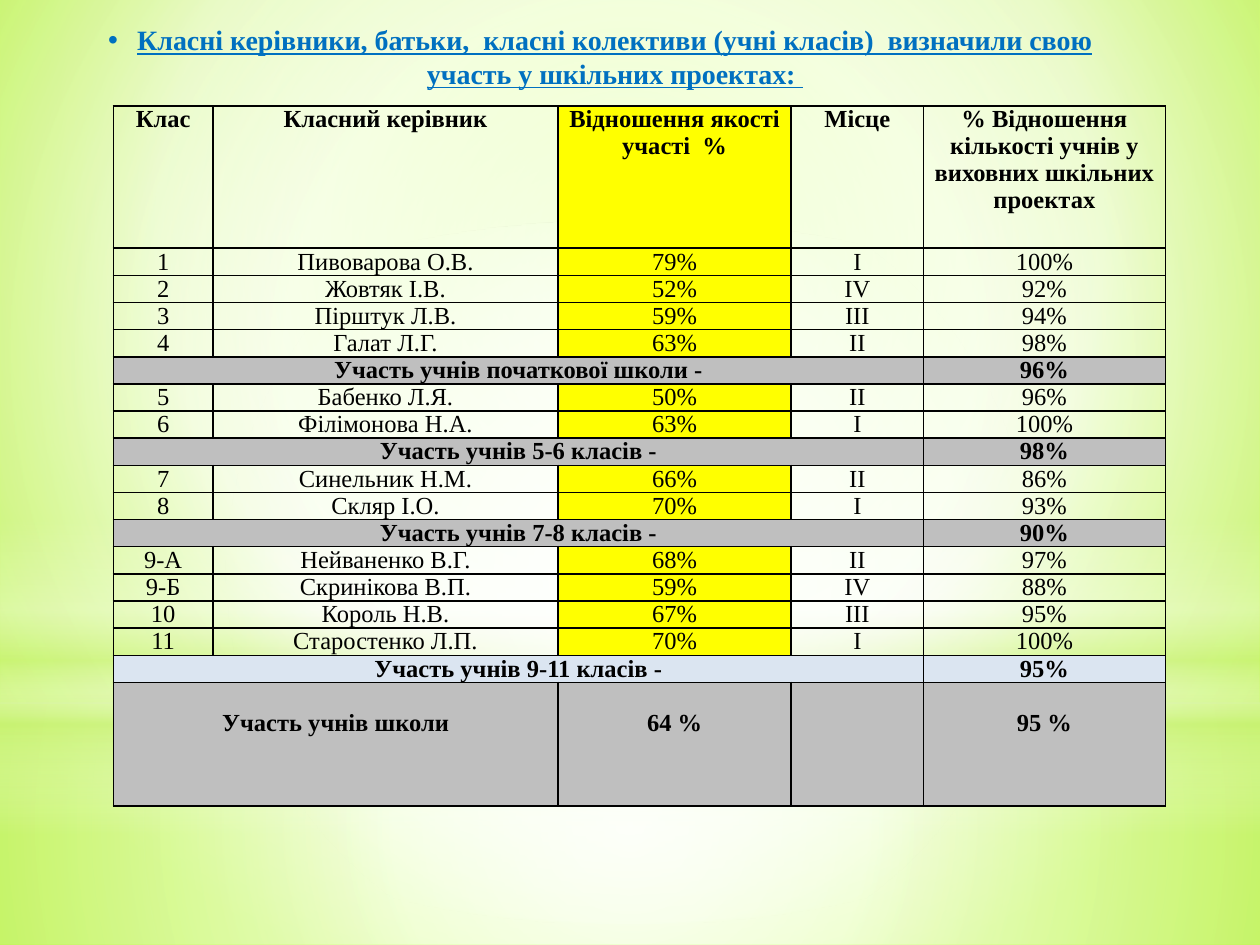
from lxml import etree
from pptx import Presentation
from pptx.dml.color import RGBColor
from pptx.enum.shapes import MSO_SHAPE
from pptx.enum.text import MSO_ANCHOR, PP_ALIGN
from pptx.oxml import parse_xml
from pptx.oxml.ns import nsdecls, qn
from pptx.util import Inches, Pt

RECT, OVAL = MSO_SHAPE.RECTANGLE, MSO_SHAPE.OVAL
TOP, CENTER = MSO_ANCHOR.TOP, PP_ALIGN.CENTER
FONT = "Times New Roman"
COLORS = {
    "black": "000000", "blue": "0070C0", "yellow": "FFFF00", "gray": "BFBFBF",
    "pale": "DBE5F1", "white": "FFFFFF", "lime": "CAF278", "edge": "B7FF29",
    "core": "CAFF60", "cream": "F7FFE7",
}
BACK = [(0, "core", 100), (60, "cream", 100), (100, "edge", 100)]
GLOWS = [
    (RECT, 5.58, 1.92, [(0, "white", 91), (37, "white", 76), (100, "lime", 79)], (50,) * 4),
    (RECT, 0, 5.58, [(0, "white", 89), (48, "white", 62), (100, "lime", 79)], (50,) * 4),
    (RECT, 4.12, 2.5, [(0, "white", 0), (29, "white", 30), (45, "lime", 40),
                       (55, "white", 26), (65, "lime", 60), (100, "white", 0)], None),
    (OVAL, 1.75, 5.58, [(0, "white", 100), (56, "white", 0)], (50,) * 4),
]
TITLE = ("Класні керівники, батьки,  класні колективи (учні класів)  "
         "визначили свою участь у шкільних проектах: ")
WIDTHS = [0.79, 2.74, 1.85, 1.05, 1.92]
HEAD_H, ROW_H, LAST_H = 1.13, 0.21, 0.98
HEAD = ["Клас", "Класний керівник", "Відношення якості участі  %", "Місце",
        "% Відношення\nкількості учнів у виховних шкільних проектах"]
GROUPS = [
    ([("1", "Пивоварова О.В.", "79%", "І", "100%"),
      ("2", "Жовтяк І.В.", "52%", "ІV", "92%"),
      ("3", "Пірштук Л.В.", "59%", "ІІІ", "94%"),
      ("4", "Галат Л.Г.", "63%", "ІІ", "98%")],
     "Участь учнів початкової школи -", "96%", "gray"),
    ([("5", "Бабенко Л.Я.", "50%", "ІІ", "96%"),
      ("6", "Філімонова Н.А.", "63%", "І", "100%")],
     "Участь учнів 5-6 класів -", "98%", "gray"),
    ([("7", "Синельник Н.М.", "66%", "ІІ", "86%"),
      ("8", "Скляр І.О.", "70%", "І", "93%")],
     "Участь учнів 7-8 класів -", "90%", "gray"),
    ([("9-А", "Нейваненко В.Г.", "68%", "ІІ", "97%"),
      ("9-Б", "Скринікова В.П.", "59%", "ІV", "88%"),
      ("10", "Король Н.В.", "67%", "ІІІ", "95%"),
      ("11", "Старостенко Л.П.", "70%", "І", "100%")],
     "Участь учнів 9-11 класів -", "95%", "pale"),
]
TOTAL = ["Участь учнів школи", "", "64 %", "", "95 %"]


def rgb(name):
    return RGBColor.from_string(COLORS[name])


def put(frame, text, size=14, color="black", bold=False, line=False, lead=None, gap=None):
    for i, part in enumerate(text.split("\n")):
        para = frame.paragraphs[0] if i == 0 else frame.add_paragraph()
        para.alignment = CENTER
        if lead:
            para.line_spacing = lead
        if gap:
            para.space_before = para.space_after = Pt(gap)
        run = para.add_run()
        run.text = part
        font = run.font
        font.name, font.size, font.bold, font.underline = FONT, Pt(size), bold, line
        font.color.rgb = rgb(color)


def shade(fill, root, stops, focus=None):
    fill.solid()
    old = next(root.iter(qn("a:solidFill")))
    marks = "".join(
        f'<a:gs pos="{pos * 1000}"><a:srgbClr val="{COLORS[name]}">'
        f'<a:alpha val="{alpha * 1000}"/></a:srgbClr></a:gs>'
        for pos, name, alpha in stops)
    if focus:
        sides = " ".join(f'{k}="{v * 1000}"' for k, v in zip("ltrb", focus))
        way = f'<a:path path="circle"><a:fillToRect {sides}/></a:path>'
    else:
        way = '<a:lin ang="5400000" scaled="0"/>'
    new = parse_xml(f'<a:gradFill {nsdecls("a")} rotWithShape="1">'
                    f'<a:gsLst>{marks}</a:gsLst>{way}</a:gradFill>')
    old.getparent().replace(old, new)


def glow(slide, kind, top, height, stops, focus):
    shape = slide.shapes.add_shape(kind, 0, Inches(top), Inches(10), Inches(height))
    shape.shadow.inherit = False
    shape.line.fill.background()
    shade(shape.fill, shape.element.spPr, stops, focus)


def head(slide):
    title = slide.shapes.title
    title.left, title.top = Inches(0.67), Inches(0.13)
    title.width, title.height = Inches(8.19), Inches(0.94)
    frame = title.text_frame
    frame.word_wrap = True
    frame.vertical_anchor = TOP
    put(frame, TITLE, size=16, color="blue", bold=True, line=True)
    props = frame.paragraphs[0]._p.get_or_add_pPr()
    props.set("marL", str(Inches(0.23)))
    props.set("indent", str(-Inches(0.23)))
    etree.SubElement(props, qn("a:buFont")).set("typeface", "Arial")
    etree.SubElement(props, qn("a:buChar")).set("char", "•")
    title.element.getparent().append(title.element)


def style(cell, fill=None):
    cell.margin_left = cell.margin_right = Inches(0.04)
    cell.margin_top = cell.margin_bottom = 0
    props = cell._tc.get_or_add_tcPr()
    for side in ("lnL", "lnR", "lnT", "lnB"):
        props.append(parse_xml(
            f'<a:{side} {nsdecls("a")} w="{Pt(1)}"><a:solidFill>'
            f'<a:srgbClr val="{COLORS["black"]}"/></a:solidFill></a:{side}>'))
    if fill:
        cell.fill.solid()
        cell.fill.fore_color.rgb = rgb(fill)
    else:
        cell.fill.background()


def fill_row(table, row, texts, fill=None, span=1, **form):
    for col, text in enumerate(texts):
        cell = table.cell(row, col)
        style(cell, fill or ("yellow" if col == 2 else None))
        put(cell.text_frame, text, **form)
    if span > 1:
        table.cell(row, 0).merge(table.cell(row, span - 1))


def grid(slide):
    count = 2 + sum(len(group[0]) + 1 for group in GROUPS)
    high = HEAD_H + ROW_H * (count - 2) + LAST_H
    table = slide.shapes.add_table(count, len(WIDTHS), Inches(0.9), Inches(0.84),
                                   Inches(sum(WIDTHS)), Inches(high)).table
    table.first_row = table.horz_banding = False
    for col, width in zip(table.columns, WIDTHS):
        col.width = Inches(width)
    for row, tall in zip(table.rows, [HEAD_H] + [ROW_H] * (count - 2) + [LAST_H]):
        row.height = Inches(tall)
    fill_row(table, 0, HEAD, bold=True)
    row = 1
    for people, label, share, fill in GROUPS:
        for texts in people:
            fill_row(table, row, texts)
            row += 1
        fill_row(table, row, [label, "", "", "", share], fill, span=4, bold=True)
        row += 1
    fill_row(table, row, TOTAL, "gray", span=2, bold=True, lead=2.0, gap=6)


def main():
    deck = Presentation()
    deck.slide_width, deck.slide_height = Inches(10), Inches(7.5)
    slide = deck.slides.add_slide(deck.slide_layouts[5])
    shade(slide.background.fill, slide.element, BACK, (20, 10, 20, 60))
    for item in GLOWS:
        glow(slide, *item)
    grid(slide)
    head(slide)
    deck.save("out.pptx")


if __name__ == "__main__":
    main()
